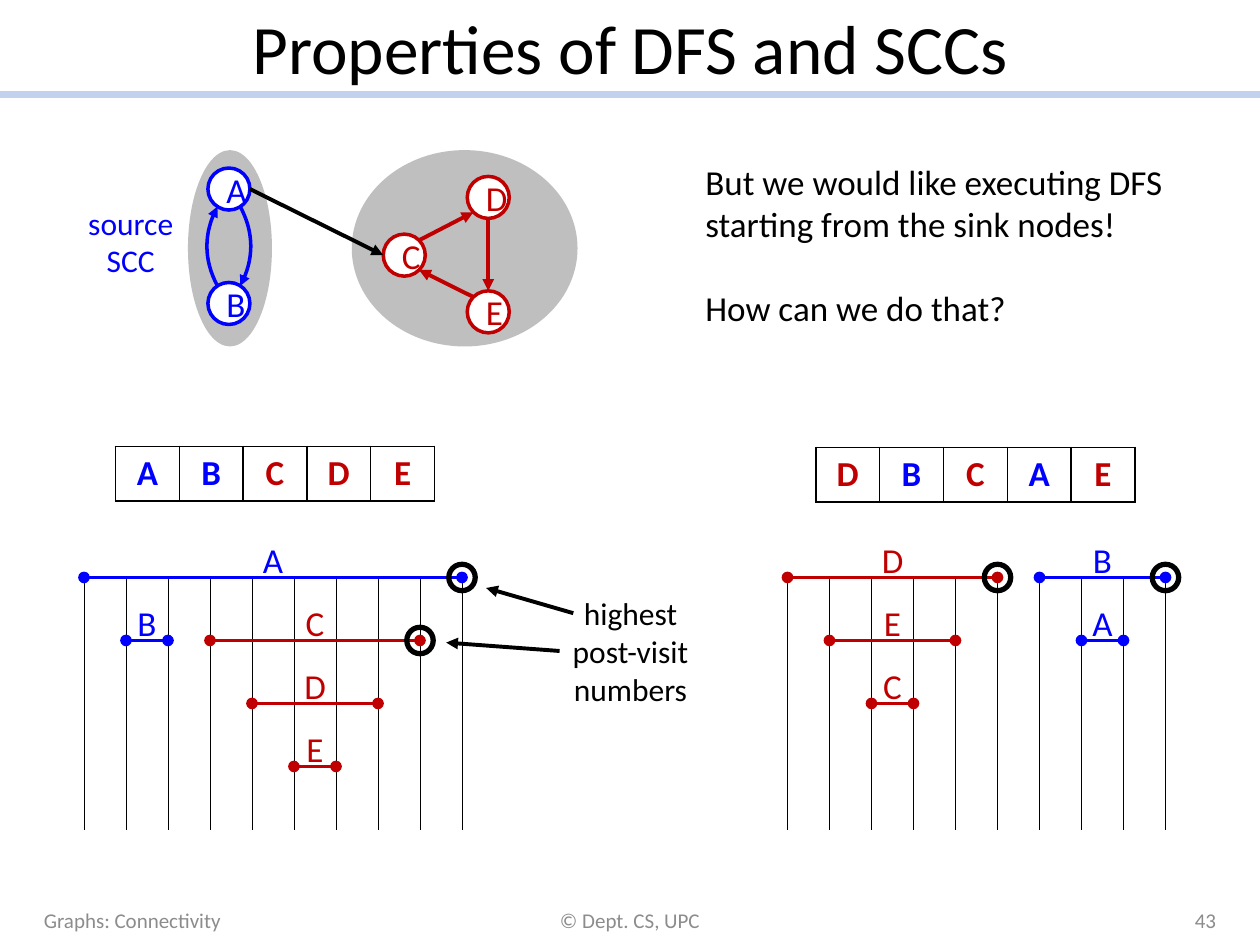
from dataclasses import dataclass
from math import cos, radians, sin
from typing import NamedTuple, Optional

from lxml.etree import SubElement
from pptx import Presentation
from pptx.dml.color import RGBColor
from pptx.enum.dml import MSO_LINE
from pptx.enum.shapes import MSO_CONNECTOR, MSO_SHAPE
from pptx.enum.text import MSO_ANCHOR, MSO_AUTO_SIZE, PP_ALIGN
from pptx.oxml.ns import qn
from pptx.util import Inches, Pt

WIDE, HIGH = Inches(10), Inches(7.5)
UNIT = WIDE / 120  # the slide is a grid of 120 columns and 90 rows
STEP, DROP = 4, 6  # one tick of time, one level of a call
TOP, END = 55, 79  # first and last row of the timelines
RADIUS = 2


@dataclass(frozen=True)
class Theme:
    font: str = "Calibri"
    black: str = "000000"
    white: str = "FFFFFF"
    grey: str = "8C8C8C"
    cloud: str = "BFBFBF"
    rule: str = "C2D1ED"
    blue: str = "0000FF"
    red: str = "C00000"
    title: float = 39.6
    body: float = 20
    note: float = 18
    foot: float = 12


class Point(NamedTuple):
    x: float
    y: float


class Box(NamedTuple):
    x: float
    y: float
    w: float
    h: float


class Bar(NamedTuple):
    name: str
    start: int
    stop: int
    level: int
    ring: bool = False


class Plan(NamedTuple):
    left: float
    order: str
    table: Box
    bars: tuple[Bar, ...]


THEME = Theme()
LEFT, MID, RIGHT = PP_ALIGN.LEFT, PP_ALIGN.CENTER, PP_ALIGN.RIGHT
NODES = {"A": Point(21.8, 18), "B": Point(21.8, 28.9), "C": Point(38.5, 24.3),
         "D": Point(46.5, 18.8), "E": Point(46.5, 29.7)}
CLOUDS = (Box(33.5, 14.3, 21.5, 18.7), Box(17.9, 14.3, 8, 18.7))
# from, angle of leaving, to, angle of arrival (clockwise from the right)
EDGES = (("D", 90, "E", 270), ("E", 225, "C", 45),
         ("C", 315, "D", 135), ("A", 0, "C", 180))
ARCS = (("A", 57, "B", 303, 1), ("B", 237, "A", 123, -1))
PLANS = (
    Plan(8, "ABCDE", Box(11, 42.5, 30.4, 4.9),
         (Bar("A", 0, 9, 0, True), Bar("B", 1, 2, 1), Bar("C", 3, 8, 1, True),
          Bar("D", 4, 7, 2), Bar("E", 5, 6, 3))),
    Plan(75, "DBCAE", Box(77.7, 42.6, 30.4, 4.9),
         (Bar("D", 0, 5, 0, True), Bar("E", 1, 4, 1), Bar("C", 2, 3, 2),
          Bar("B", 6, 9, 0, True), Bar("A", 7, 8, 1))),
)
FOOT = ((Box(3, 85.2, 28, 4.8), "Graphs: Connectivity", LEFT),
        (Box(41, 85.2, 38, 4.8), "© Dept. CS, UPC", MID),
        (Box(89, 85.2, 28, 4.8), "43", RIGHT))
HINTS = ((Point(54.6, 58.4), Point(46.3, 56)),
         (Point(53.3, 62), Point(42.5, 61.2)))


def tint(name: str) -> str:
    """Colour of the component that a node belongs to."""
    return THEME.blue if name in "AB" else THEME.red


def emu(*units: float) -> list[int]:
    return [round(u * UNIT) for u in units]


def style(par, size: float, color: str, align=MID, bold: bool = False) -> None:
    par.alignment = align
    font = par.font
    font.name, font.size, font.bold = THEME.font, Pt(size), bold
    font.color.rgb = RGBColor.from_string(color)


def stroke(line, color: str, width: float, head: str = "", tail: str = "") -> None:
    line.color.rgb = RGBColor.from_string(color)
    line.width = Pt(width)
    for tag, kind in (("a:headEnd", head), ("a:tailEnd", tail)):
        if kind:
            SubElement(line._get_or_add_ln(), qn(tag), type=kind)


def join(shapes, a: Point, b: Point, color: str, width: float = 2.25,
         head: str = "", tail: str = "", dots: bool = False) -> None:
    link = shapes.add_connector(MSO_CONNECTOR.STRAIGHT, *emu(*a, *b))
    SubElement(link._element.spPr, qn("a:effectLst"))
    if dots:
        link.line.dash_style = MSO_LINE.ROUND_DOT
    stroke(link.line, color, width, head, tail)


def oval(shapes, box: Box, fill: Optional[str] = None,
         edge: Optional[str] = None, width: float = 2):
    shape = shapes.add_shape(MSO_SHAPE.OVAL, *emu(*box))
    shape.shadow.inherit = False
    if fill:
        shape.fill.solid()
        shape.fill.fore_color.rgb = RGBColor.from_string(fill)
    else:
        shape.fill.background()
    if edge:
        stroke(shape.line, edge, width)
    else:
        shape.line.fill.background()
    return shape


def around(spot: Point, r: float) -> Box:
    return Box(spot.x - r, spot.y - r, 2 * r, 2 * r)


def label(shapes, box: Box, text: str, size: float, color: str,
          align=MID, anchor=MSO_ANCHOR.TOP):
    frame = shapes.add_textbox(*emu(*box)).text_frame
    frame.word_wrap = False
    frame.vertical_anchor = anchor
    par = frame.paragraphs[0]
    par.text = text
    style(par, size, color, align)
    return frame


def rim(name: str, angle: float) -> Point:
    x, y = NODES[name]
    turn = radians(angle)
    return Point(x + RADIUS * cos(turn), y + RADIUS * sin(turn))


def arc(shapes, a: Point, b: Point, side: int, color: str) -> None:
    """Arrow from a to b that bulges to the given side."""
    count = 16
    spots = []
    for i in range(count + 1):
        t = i / count
        spots.append(emu(a.x + (b.x - a.x) * t + side * 4 * t * (1 - t),
                         a.y + (b.y - a.y) * t))
    maker = shapes.build_freeform(*spots[0])
    maker.add_line_segments(spots[1:], close=False)
    curve = maker.convert_to_shape()
    curve.shadow.inherit = False
    curve.fill.background()
    stroke(curve.line, color, 2, tail="triangle")


def graph(shapes) -> None:
    for cloud in CLOUDS:
        oval(shapes, cloud, THEME.cloud)
    for name, spot in NODES.items():
        node = oval(shapes, around(spot, RADIUS), THEME.white, tint(name))
        node.text_frame.vertical_anchor = MSO_ANCHOR.MIDDLE
        par = node.text_frame.paragraphs[0]
        par.text = name
        style(par, THEME.body, tint(name))
    for a, leave, b, reach in EDGES:
        color = tint(a) if tint(a) == tint(b) else THEME.black
        join(shapes, rim(a, leave), rim(b, reach), color, tail="triangle")
    for a, leave, b, reach, side in ARCS:
        arc(shapes, rim(a, leave), rim(b, reach), side, tint(a))


def table(shapes, plan: Plan) -> None:
    grid = shapes.add_table(1, len(plan.order), *emu(*plan.table)).table
    grid.first_row = grid.horz_banding = False
    for cell, name in zip(grid.iter_cells(), plan.order):
        props = cell._tc.get_or_add_tcPr()
        for side in ("a:lnL", "a:lnR", "a:lnT", "a:lnB"):
            edge = SubElement(props, qn(side), w=str(Pt(1)))
            SubElement(SubElement(edge, qn("a:solidFill")),
                       qn("a:srgbClr"), val=THEME.black)
        cell.fill.background()
        par = cell.text_frame.paragraphs[0]
        par.text = name
        style(par, THEME.body, tint(name), bold=True)


def times(shapes, plan: Plan) -> None:
    """Timeline of visits: guides, bars, names and rings."""
    for tick in range(2 * len(plan.order)):
        x = plan.left + tick * STEP
        join(shapes, Point(x, TOP), Point(x, END), THEME.black, 0.25, dots=True)
    for bar in plan.bars:
        y = TOP + bar.level * DROP
        a, b = (Point(plan.left + t * STEP, y) for t in (bar.start, bar.stop))
        join(shapes, a, b, tint(bar.name), head="oval", tail="oval")
        label(shapes, Box((a.x + b.x) / 2 - 2.2, y - 4.3, 4.4, 5.3),
              bar.name, THEME.body, tint(bar.name))
        if bar.ring:
            oval(shapes, around(b, 1.26), edge=THEME.black, width=3)


def main() -> None:
    deck = Presentation()
    deck.slide_width, deck.slide_height = WIDE, HIGH
    shapes = deck.slides.add_slide(deck.slide_layouts[5]).shapes

    title = shapes.title
    title.left, title.top, title.width, title.height = emu(6, 0, 108, 9)
    title.text_frame.text = "Properties of DFS and SCCs"
    title.text_frame.auto_size = MSO_AUTO_SIZE.NONE
    title.text_frame.vertical_anchor = MSO_ANCHOR.MIDDLE
    style(title.text_frame.paragraphs[0], THEME.title, THEME.black)
    join(shapes, Point(0, 9), Point(120, 9), THEME.rule, 4)
    for box, text, align in FOOT:
        label(shapes, box, text, THEME.foot, THEME.grey, align, MSO_ANCHOR.MIDDLE)

    graph(shapes)
    label(shapes, Box(7.2, 18.8, 10.5, 8.5), "source\nSCC", THEME.note, THEME.blue)
    for plan in PLANS:
        table(shapes, plan)
        times(shapes, plan)

    label(shapes, Box(53.2, 56, 13.7, 12.1), "highest\npost-visit\nnumbers",
          THEME.note, THEME.black)
    for a, b in HINTS:
        join(shapes, a, b, THEME.black, tail="triangle")

    frame = label(shapes, Box(66, 14.7, 46.3, 17.4),
                  "But we would like executing DFS\nstarting from the sink nodes!",
                  THEME.body, THEME.black, LEFT)
    ask = frame.add_paragraph()
    ask.text = "How can we do that?"
    ask.space_before = Pt(24)
    style(ask, THEME.body, THEME.black, LEFT)
    deck.save("out.pptx")


if __name__ == "__main__":
    main()
